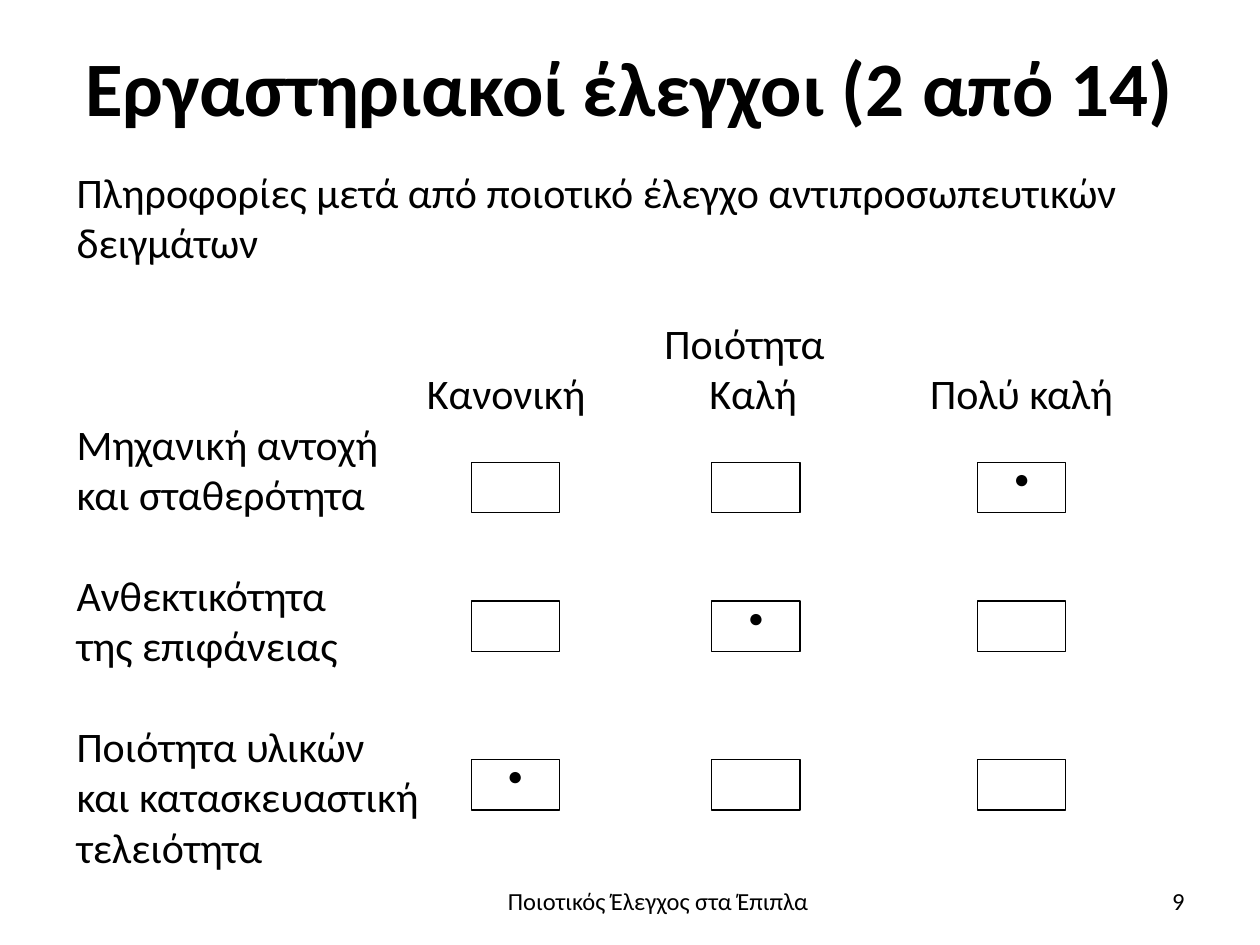
from lxml import etree
from pptx import Presentation
from pptx.dml.color import RGBColor
from pptx.enum.shapes import MSO_SHAPE
from pptx.enum.text import MSO_ANCHOR, PP_ALIGN
from pptx.oxml.ns import qn
from pptx.util import Inches, Pt

LEFT, CENTER, RIGHT = PP_ALIGN.LEFT, PP_ALIGN.CENTER, PP_ALIGN.RIGHT
TOP, MIDDLE = MSO_ANCHOR.TOP, MSO_ANCHOR.MIDDLE
RECT = MSO_SHAPE.RECTANGLE

LINE = 28.8
BODY = [
    ("Πληροφορίες μετά από ποιοτικό έλεγχο αντιπροσωπευτικών", 0, ()),
    ("δειγμάτων", 0, ()),
    ("\tΠοιότητα", LINE, (5.3,)),
    ("\tΚανονική\tΚαλή\tΠολύ καλή", 0, (3.41, 5.37, 7.5)),
    ("Μηχανική αντοχή", 0, ()),
    ("και σταθερότητα", 0, ()),
    ("Ανθεκτικότητα", LINE, ()),
    ("της επιφάνειας", 0, ()),
    ("Ποιότητα υλικών", LINE, ()),
    ("και κατασκευαστική", 0, ()),
    ("τελειότητα", 0, ()),
]
RATING_COLUMNS = [3.74, 5.65, 7.76]
RATING_ROWS = [(3.67, 2), (4.77, 1), (6.03, 0)]


def color(value):
    return RGBColor.from_string(value)


def write(p, text, size=24, font="Calibri", fill="000000", bold=False,
          align=LEFT, before=0, line=None, tabs=()):
    if tabs:
        tab_list = etree.SubElement(p._p.get_or_add_pPr(), qn("a:tabLst"))
        for pos in tabs:
            etree.SubElement(tab_list, qn("a:tab"), pos=str(Inches(pos)), algn="ctr")
    p.alignment = align
    p.space_before = Pt(before)
    if line:
        p.line_spacing = Pt(line)
    r = p.add_run()
    r.text = text
    r.font.size = Pt(size)
    r.font.name = font
    r.font.bold = bold
    r.font.color.rgb = color(fill)


class Deck:
    ink = "000000"
    paper = "FFFFFF"

    def __init__(self, prs):
        self.s = prs.slides.add_slide(prs.slide_layouts[6])

    def frame(self, x, y, w, h, anchor=TOP):
        sp = self.s.shapes.add_textbox(Inches(x), Inches(y), Inches(w), Inches(h))
        tf = sp.text_frame
        tf.word_wrap = True
        tf.vertical_anchor = anchor
        return tf

    def label(self, text, x, y, w, h, anchor=TOP, **style):
        write(self.frame(x, y, w, h, anchor).paragraphs[0], text, **style)

    def body(self, lines, x, y, w, h):
        tf = self.frame(x, y, w, h)
        for i, (text, before, tabs) in enumerate(lines):
            p = tf.add_paragraph() if i else tf.paragraphs[0]
            write(p, text, before=before, line=LINE, tabs=tabs)

    def checkbox(self, x, y, checked):
        sp = self.s.shapes.add_shape(RECT, Inches(x), Inches(y), Inches(0.7), Inches(0.4))
        sp.shadow.inherit = False
        sp.fill.solid()
        sp.fill.fore_color.rgb = color(self.paper)
        sp.line.color.rgb = color(self.ink)
        sp.line.width = Pt(0.75)
        if checked:
            tf = sp.text_frame
            tf.margin_left = tf.margin_right = tf.margin_top = tf.margin_bottom = 0
            tf.vertical_anchor = TOP
            write(tf.paragraphs[0], "●", size=15, font="Times New Roman", align=CENTER)


def main():
    prs = Presentation()
    prs.slide_width, prs.slide_height = Inches(10), Inches(7.5)
    deck = Deck(prs)
    deck.label("Εργαστηριακοί έλεγχοι (2 από 14)", 0.51, -0.03, 8.98, 1.42,
               anchor=MIDDLE, size=44, bold=True, align=CENTER)
    deck.body(BODY, 0.51, 1.27, 9.06, 5.76)
    deck.label("Ποιοτικός Έλεγχος στα Έπιπλα", 3.48, 6.98, 3.49, 0.55,
               size=14, align=CENTER)
    deck.label("9", 7.17, 6.95, 2.33, 0.4, anchor=MIDDLE, size=14, align=RIGHT)
    for y, rating in RATING_ROWS:
        for column, x in enumerate(RATING_COLUMNS):
            deck.checkbox(x, y, column == rating)
    prs.save("out.pptx")


if __name__ == "__main__":
    main()
